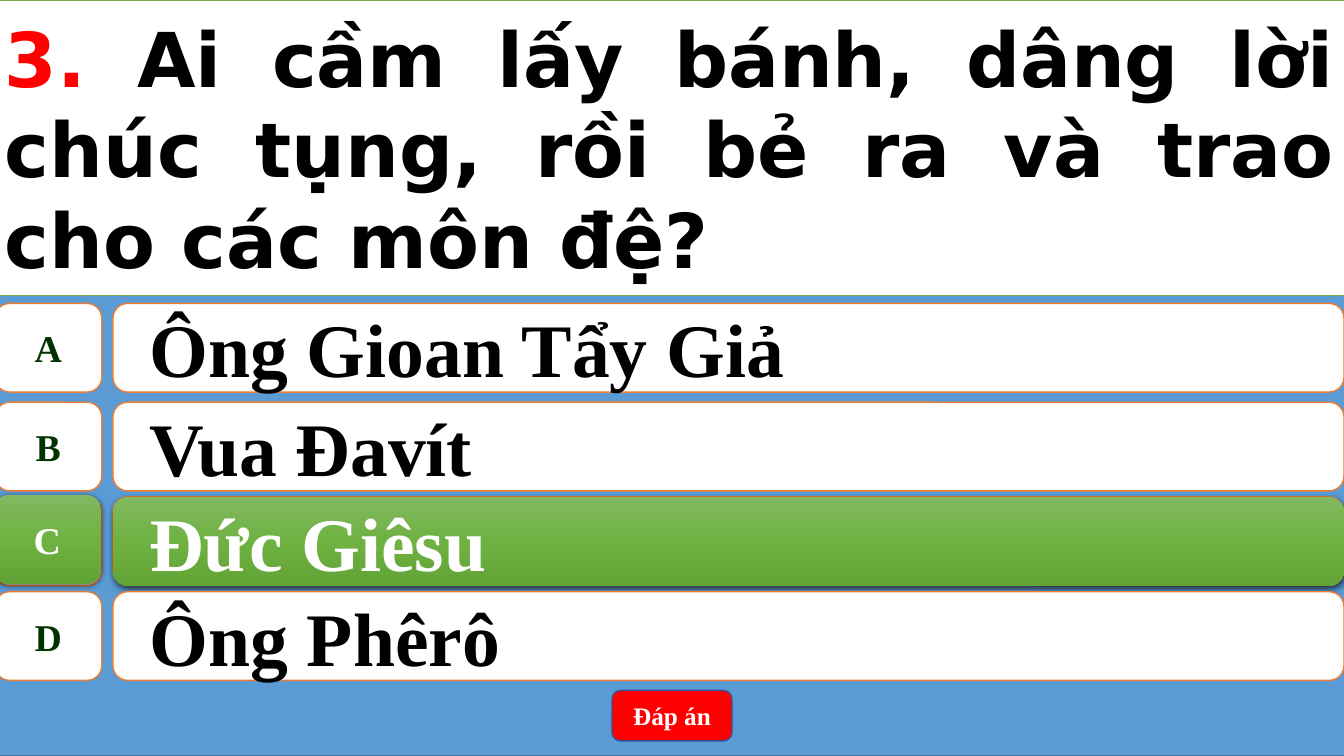
from copy import deepcopy

from lxml import etree
from pptx import Presentation
from pptx import util as u
from pptx.dml.color import RGBColor
from pptx.enum import shapes, text
from pptx.oxml.ns import qn

COLORS = {
    "white": "FFFFFF", "black": "000000", "red": "FF0000",
    "background": "5B9BD5", "background_line": "43739E",
    "question_line": "70AD47", "answer_line": "ED7D31",
    "button_line": "325491", "letter": "003300",
}
GREEN_STOPS = ((0, "81B861"), (0.5, "6FB242"), (1, "62A336"))
SERIF, SANS = "Times New Roman", "DejaVu Sans"

WIDTH, HEIGHT = 13.33, 7.5
LEFT_EDGE, FULL_WIDTH = -0.05, 13.39
LETTER_COLUMN = (LEFT_EDGE, 1.06)
ANSWER_COLUMN = (1.12, 12.21)
ROW_HEIGHT = 0.88
ANSWERS = (
    ("A", "Ông Gioan Tẩy Giả", 3.01),
    ("B", "Vua Đavít", 3.99),
    ("C", "Đức Giêsu", 4.93),
    ("D", "Ông Phêrô", 5.87),
)
CORRECT = "C"


def rgb(name):
    return RGBColor.from_string(COLORS[name])


def add_box(parent, kind, box, fill=None, line=None):
    """Add a preset shape; box is left, top, width, height in inches."""
    shape = parent.shapes.add_shape(kind, *(u.Inches(value) for value in box))
    shape.shadow.inherit = False
    if fill:
        shape.fill.solid()
        shape.fill.fore_color.rgb = rgb(fill)
    if line:
        shape.line.color.rgb = rgb(line)
        shape.line.width = u.Pt(1)
    else:
        shape.line.fill.background()
    return shape


def write(shape, runs, size, font=SERIF, align=text.PP_ALIGN.CENTER,
          wrap=True, indent=None):
    """Fill the shape with one bold paragraph of (words, color) runs."""
    frame = shape.text_frame
    frame.word_wrap = wrap
    frame.vertical_anchor = text.MSO_ANCHOR.MIDDLE
    paragraph = frame.paragraphs[0]
    paragraph.alignment = align
    if indent:
        paragraph.level = 1
        properties = paragraph._p.get_or_add_pPr()
        for key, value in zip(("marL", "indent"), indent):
            properties.set(key, str(u.Inches(value)))
    for words, color in runs:
        run = paragraph.add_run()
        run.text = words
        run.font.size = u.Pt(size)
        run.font.name = font
        run.font.bold = True
        run.font.color.rgb = rgb(color)


def highlight(shape):
    """Give the shape the green gradient and soft shadow of a right answer."""
    shape.fill.gradient()
    shape.fill.gradient_angle = 270
    properties = shape._element.spPr
    first_stop = properties.find(".//" + qn("a:gs"))
    first_stop.addnext(deepcopy(first_stop))
    for stop, (position, color) in zip(shape.fill.gradient_stops, GREEN_STOPS):
        stop.position = position
        stop.color.rgb = RGBColor.from_string(color)
    shadow = etree.SubElement(
        properties.find(qn("a:effectLst")), qn("a:outerShdw"),
        blurRad=str(u.Pt(4.5)), dist=str(u.Pt(1.5)), dir="5400000",
        algn="ctr", rotWithShape="0")
    color = etree.SubElement(shadow, qn("a:srgbClr"), val=COLORS["black"])
    etree.SubElement(color, qn("a:alpha"), val="63000")


def add_row_boxes(slide, top, fill=None, line=None, letter_shift=(0, 0)):
    """Add a grouped letter box and answer box; return both."""
    group = slide.shapes.add_group_shape()
    left, width = LETTER_COLUMN
    shift_x, shift_y = letter_shift
    letter_box = add_box(
        group, shapes.MSO_SHAPE.FLOWCHART_ALTERNATE_PROCESS,
        (left + shift_x, top + shift_y, width, ROW_HEIGHT), fill, line)
    left, width = ANSWER_COLUMN
    answer_box = add_box(group, shapes.MSO_SHAPE.ROUNDED_RECTANGLE,
                         (left, top, width, ROW_HEIGHT), fill, line)
    return letter_box, answer_box


def add_answer(slide, letter, answer, top):
    boxes = add_row_boxes(slide, top, "white", "answer_line")
    letter_color, answer_color = "letter", "black"
    if letter == CORRECT:
        # The outlined row keeps its orange rim around the green one.
        boxes = add_row_boxes(slide, top, letter_shift=(-0.01, -0.02))
        for box in boxes:
            highlight(box)
        letter_color = answer_color = "white"
    letter_box, answer_box = boxes
    write(letter_box, [(letter, letter_color)], 27, wrap=False)
    write(answer_box, [(answer, answer_color)], 54,
          align=text.PP_ALIGN.LEFT, indent=(0.5, -0.28))


def add_question(slide):
    question = add_box(slide, shapes.MSO_SHAPE.RECTANGLE,
                       (LEFT_EDGE, 0, FULL_WIDTH, 2.93),
                       "white", "question_line")
    write(question, [
        ("3. ", "red"),
        ("Ai cầm lấy bánh, dâng lời chúc tụng, rồi bẻ ra và trao "
         "cho các môn đệ?", "black"),
    ], 54, font=SANS, align=text.PP_ALIGN.JUSTIFY)


def add_button(slide):
    button = add_box(slide, shapes.MSO_SHAPE.ROUNDED_RECTANGLE,
                     (6.07, 6.85, 1.19, 0.5), "red", "button_line")
    write(button, [("Đáp án", "white")], 18)


def main():
    presentation = Presentation()
    presentation.slide_width = u.Inches(WIDTH)
    presentation.slide_height = u.Inches(HEIGHT)
    slide = presentation.slides.add_slide(presentation.slide_layouts[6])
    add_box(slide, shapes.MSO_SHAPE.RECTANGLE,
            (LEFT_EDGE, 0, FULL_WIDTH, HEIGHT),
            "background", "background_line")
    for letter, answer, top in ANSWERS:
        add_answer(slide, letter, answer, top)
    add_button(slide)
    add_question(slide)
    presentation.save("out.pptx")


if __name__ == "__main__":
    main()
